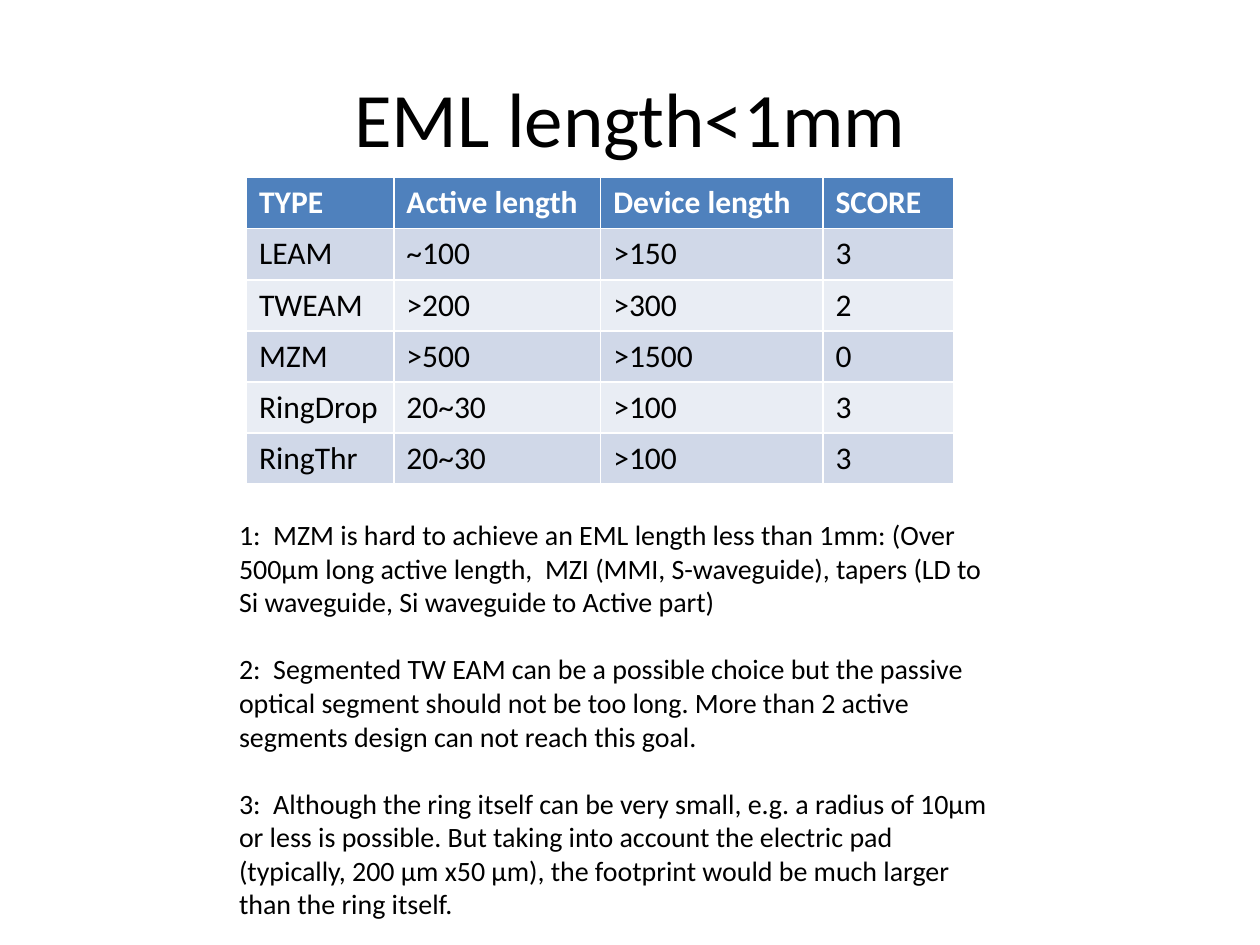
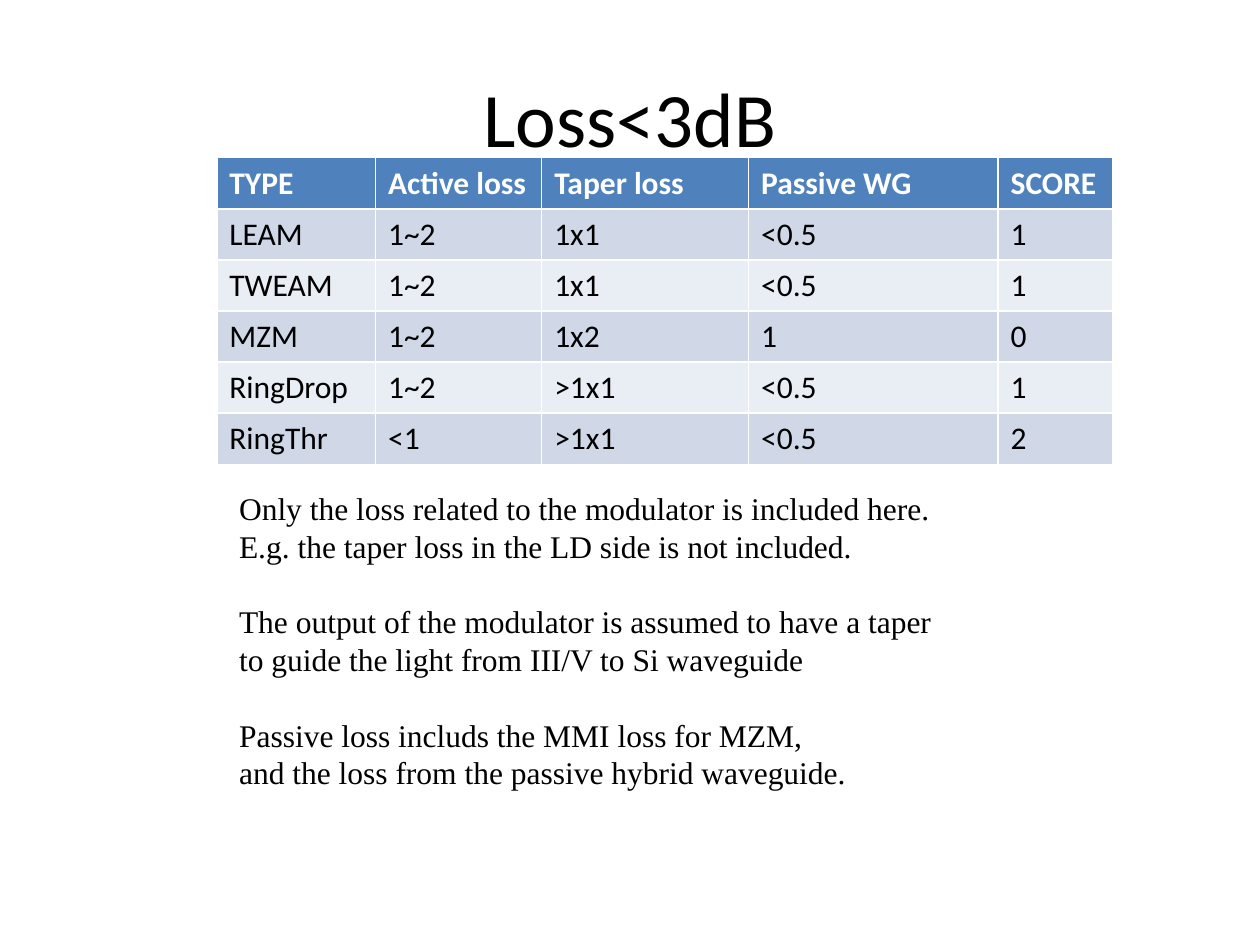
from pptx import Presentation
from pptx.dml.color import RGBColor
from pptx.enum.text import MSO_ANCHOR, PP_ALIGN
from pptx.util import Cm, Pt

COLORS = {
    "text": "000000",
    "header_text": "FFFFFF",
    "header": "4F81BD",
    "odd_row": "D0D8E8",
    "even_row": "E9EDF4",
}
MODULATORS = ["LEAM", "TWEAM", "MZM", "RingDrop", "RingThr"]


def rgb(name):
    """Return the named colour of the deck."""
    return RGBColor.from_string(COLORS[name])


def write(p, text, size=18, font="Calibri", color="text", bold=False, align=None):
    """Put formatted text into a paragraph."""
    p.alignment = align
    r = p.add_run()
    r.text = text
    r.font.size = Pt(size)
    r.font.name = font
    r.font.bold = bold
    r.font.color.rgb = rgb(color)


class Deck:
    """Shared style and the slide being built."""

    def __init__(self):
        """Start a 4:3 presentation."""
        self.prs = Presentation()
        self.prs.slide_width, self.prs.slide_height = Cm(25.4), Cm(19.05)
        self.s = None

    def slide(self, title):
        """Add a slide with a centred title."""
        self.s = self.prs.slides.add_slide(self.prs.slide_layouts[5])
        sp = self.s.shapes.title
        sp.left, sp.top, sp.width, sp.height = Cm(1.27), Cm(0.76), Cm(22.86), Cm(3.18)
        sp.text_frame.vertical_anchor = MSO_ANCHOR.MIDDLE
        write(sp.text_frame.paragraphs[0], title, size=44, align=PP_ALIGN.CENTER)

    def table(self, left, top, widths, header, columns, row_height=1.03):
        """Add a banded table with one row for each modulator."""
        rows = [header, *zip(MODULATORS, *columns)]
        table = self.s.shapes.add_table(
            len(rows), len(widths), Cm(left), Cm(top),
            Cm(sum(widths)), Cm(row_height * len(rows))).table
        for column, width in zip(table.columns, widths):
            column.width = Cm(width)
        for i, row in enumerate(rows):
            table.rows[i].height = Cm(row_height)
            band = "header" if i == 0 else "odd_row" if i % 2 else "even_row"
            color = "text" if i else "header_text"
            for j, text in enumerate(row):
                cell = table.cell(i, j)
                cell.fill.solid()
                cell.fill.fore_color.rgb = rgb(band)
                write(cell.text_frame.paragraphs[0], text, color=color, bold=i == 0)

    def notes(self, top, width, height, groups, size, font):
        """Add groups of lines set apart by one line of space."""
        tf = self.s.shapes.add_textbox(Cm(4.57), Cm(top), Cm(width), Cm(height)).text_frame
        tf.word_wrap = True
        pitch = Pt(size * 1.2)
        for i, group in enumerate(groups):
            for j, line in enumerate(group):
                p = tf.add_paragraph() if i or j else tf.paragraphs[0]
                p.line_spacing = pitch
                p.space_before = pitch if i and j == 0 else Pt(0)
                write(p, line, size=size, font=font)


def main():
    """Build and save both slides."""
    deck = Deck()

    deck.slide("EML length<1mm")
    deck.table(
        4.97, 3.58, [2.97, 4.17, 4.48, 2.64],
        ["TYPE", "Active length", "Device length", "SCORE"],
        [["~100", ">200", ">500", "20~30", "20~30"],
         [">150", ">300", ">1500", ">100", ">100"],
         "32033"])
    deck.notes(10.31, 15.88, 8.46, [
        ["1:  MZM is hard to achieve an EML length less than 1mm: (Over 500μm long "
         "active length,  MZI (MMI, S-waveguide), tapers (LD to Si waveguide, "
         "Si waveguide to Active part)"],
        ["2:  Segmented TW EAM can be a possible choice but the passive optical "
         "segment should not be too long. More than 2 active segments design can "
         "not reach this goal."],
        ["3:  Although the ring itself can be very small, e.g. a radius of 10μm or "
         "less is possible. But taking into account the electric pad (typically, "
         "200 μm x50 μm), the footprint would be much larger than the ring itself."],
    ], size=16, font="Calibri")

    deck.slide("Loss<3dB")
    deck.table(
        4.37, 3.18, [3.2, 3.35, 4.17, 5.03, 2.31],
        ["TYPE", "Active loss", "Taper loss", "Passive WG", "SCORE"],
        [["1~2"] * 4 + ["<1"],
         ["1x1", "1x1", "1x2", ">1x1", ">1x1"],
         ["<0.5", "<0.5", "1", "<0.5", "<0.5"],
         "11012"])
    deck.notes(9.73, 14.78, 6.4, [
        ["Only the loss related to the modulator is included here.",
         "E.g. the taper loss in the LD side is not included."],
        ["The output of the modulator is assumed to have a taper",
         "to guide the light from III/V to Si waveguide"],
        ["Passive loss includs the MMI loss for MZM,",
         "and the loss from the passive hybrid waveguide."],
    ], size=18, font="Times New Roman")

    deck.prs.save("out.pptx")


if __name__ == "__main__":
    main()
